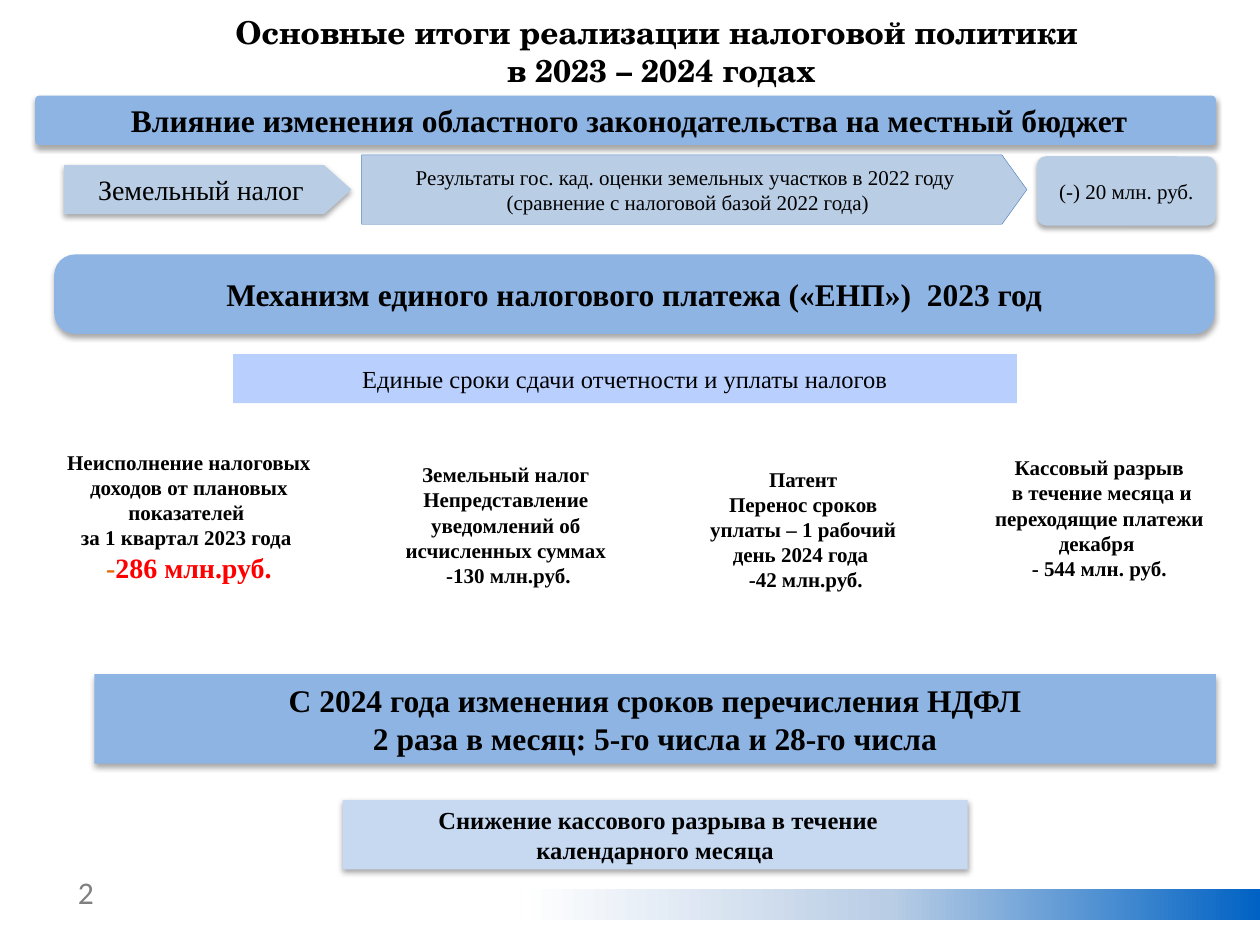
"""Build the slide on the results of tax policy in 2023 – 2024."""
import lxml.etree
import pptx
import pptx.dml.color
import pptx.enum.shapes
import pptx.enum.text
import pptx.oxml
import pptx.oxml.ns
import pptx.util

Inches = pptx.util.Inches
Kind = pptx.enum.shapes.MSO_SHAPE
SERIF = "Times New Roman"
HUES = {"black": "000000", "white": "FFFFFF", "blue": "8EB4E3", "steel": "B9CDE5",
        "pale": "C6D9F1", "lilac": "B9D0FF", "edge": "4F81BD", "deep": "0062C4",
        "grey": "808080", "orange": "E46C0A", "red": "FF0000"}
NS = pptx.oxml.ns.nsdecls("a")
SHADE = (f'<a:effectLst {NS}><a:outerShdw blurRad="39370" dist="22860" dir="5400000" rotWithShape="0">'
         f'<a:srgbClr val="{HUES["black"]}"><a:alpha val="35000"/></a:srgbClr>'
         '</a:outerShdw></a:effectLst>')


def tint(name):
    return pptx.dml.color.RGBColor.from_string(HUES[name])


def write(shape, text, size, bold=False, font=SERIF, hue="black", align="CENTER", anchor="MIDDLE"):
    frame = shape.text_frame
    frame.word_wrap = True
    frame.vertical_anchor = getattr(pptx.enum.text.MSO_ANCHOR, anchor)
    frame.text = text
    for para in frame.paragraphs:
        para.alignment = getattr(pptx.enum.text.PP_ALIGN, align)
        for run in para.runs:
            run.font.size = pptx.util.Pt(size)
            run.font.bold = bold
            run.font.name = font
            run.font.color.rgb = tint(hue)


deck = pptx.Presentation()
deck.slide_width, deck.slide_height = Inches(10), Inches(7.5)
slide = deck.slides.add_slide(deck.slide_layouts[6])
shapes = slide.shapes

title = shapes.add_textbox(Inches(0.75), Inches(0.13), Inches(9), Inches(0.55))
write(title, "Основные итоги реализации налоговой политики \nв 2023 – 2024 годах",
      18, True, "TeX Gyre Schola")

ROUND, ARROW, PLAIN = Kind.ROUNDED_RECTANGLE, Kind.PENTAGON, Kind.ROUND_2_DIAG_RECTANGLE
BOXES = [
    (ROUND, 0.26, (0.43, 2.02, 9.21, 0.63), "blue", True, 18, True,
     "Механизм единого налогового платежа («ЕНП»)  2023 год"),
    (ROUND, 0.08, (0.28, 0.76, 9.37, 0.39), "blue", True, 18, True,
     " Влияние изменения областного законодательства на местный бюджет"),
    (ROUND, 0.13, (8.23, 1.24, 1.42, 0.55), "steel", True, 12, False, "(-) 20 млн. руб."),
    (ARROW, 0.56, (0.51, 1.31, 2.28, 0.39), "steel", True, 16, False, "Земельный налог"),
    (ARROW, 0.36, (2.87, 1.23, 5.28, 0.55), "steel", False, 12, False,
     "Результаты гос. кад. оценки земельных участков в 2022 году \n"
     "(сравнение с налоговой базой 2022 года)"),
    (PLAIN, 0, (1.85, 2.81, 6.22, 0.39), "lilac", False, 14, False,
     "Единые сроки сдачи отчетности и уплаты налогов"),
    (PLAIN, 0, (7.7, 3.48, 2.05, 1.26), "white", False, 12, True,
     "Кассовый разрыв\n в течение месяца и переходящие платежи декабря \n- 544 млн. руб."),
    (PLAIN, 0, (0.28, 3.51, 2.44, 1.18), "white", False, 12, True,
     "Неисполнение налоговых доходов от плановых показателей \nза 1 квартал 2023 года \n-"),
    (PLAIN, 0, (2.95, 3.53, 2.13, 1.27), "white", False, 12, True,
     "Земельный налог\nНепредставление уведомлений об исчисленных суммах\n -130 млн.руб."),
    (PLAIN, 0, (5.39, 3.6, 1.97, 1.2), "white", False, 12, True,
     "Патент\nПеренос сроков уплаты – 1 рабочий день 2024 года \n -42 млн.руб."),
    (PLAIN, 0, (0.75, 5.35, 8.9, 0.71), "blue", True, 18, True,
     "С 2024 года изменения сроков перечисления НДФЛ\n 2 раза в месяц: 5-го числа и 28-го числа "),
    (PLAIN, 0, (2.72, 6.35, 4.96, 0.55), "pale", True, 14, True,
     " Снижение кассового разрыва в течение календарного месяца"),
]
for kind, bend, place, fill, shade, size, bold, text in BOXES:
    box = shapes.add_shape(kind, *map(Inches, place))
    box.adjustments[0] = bend
    box.shadow.inherit = False
    box.fill.solid()
    box.fill.fore_color.rgb = tint(fill)
    box.line.fill.background()
    write(box, text, size, bold)
    if shade:
        props = box.element.spPr
        props.remove(props.find(pptx.oxml.ns.qn("a:effectLst")))
        props.append(pptx.oxml.parse_xml(SHADE))
    if text.startswith("Результаты"):
        box.line.color.rgb = tint("edge")
        box.line.width = pptx.util.Pt(0.25)
    if text.startswith("Неисполнение"):
        last = box.text_frame.paragraphs[-1]
        last.add_run().text = "286 млн.руб."
        for run, hue in zip(last.runs, ("orange", "red")):
            run.font.size = pptx.util.Pt(16)
            run.font.bold = True
            run.font.name = SERIF
            run.font.color.rgb = tint(hue)

band = shapes.add_shape(Kind.RECTANGLE, Inches(4.13), Inches(7.06), Inches(5.87), Inches(0.24))
band.shadow.inherit = False
band.line.fill.background()
band.fill.gradient()
band.fill.gradient_angle = 180
stops = band.element.spPr.find(".//" + pptx.oxml.ns.qn("a:gsLst"))
for stop in list(stops):
    stops.remove(stop)
for spot, hue in ((0, "deep"), (50, "steel"), (100, "white")):
    stops.append(pptx.oxml.parse_xml(
        f'<a:gs {NS} pos="{spot * 1000}"><a:srgbClr val="{HUES[hue]}"/></a:gs>'))

page = shapes.add_textbox(Inches(0.52), Inches(6.88), Inches(0.68), Inches(0.4))
write(page, "2", 18, font="Calibri", hue="grey", align="LEFT", anchor="TOP")

deck.save("out.pptx")
